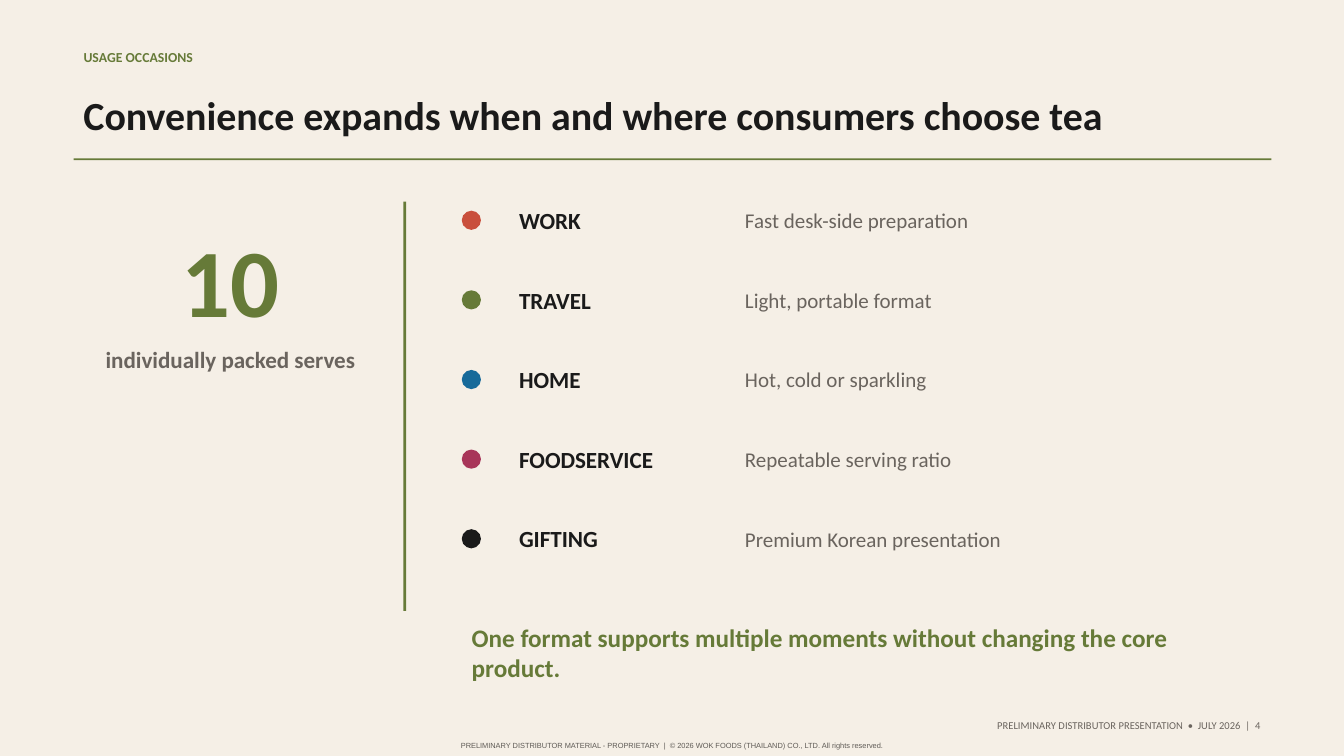
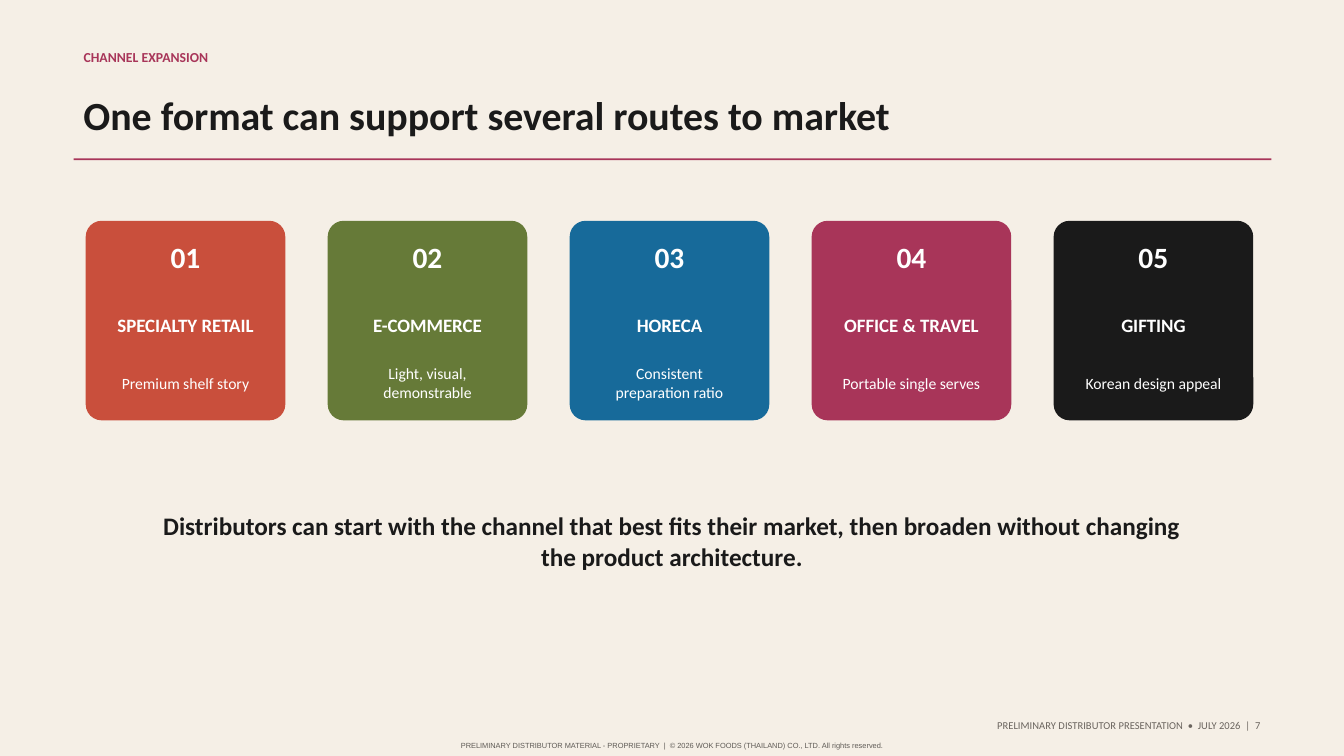
from dataclasses import dataclass

from pptx import Presentation
from pptx.dml.color import RGBColor
from pptx.enum.shapes import MSO_SHAPE
from pptx.enum.text import MSO_ANCHOR, PP_ALIGN
from pptx.util import Inches, Pt

RECT, ROUND, OVAL = MSO_SHAPE.RECTANGLE, MSO_SHAPE.ROUNDED_RECTANGLE, MSO_SHAPE.OVAL
LEFT, MID, RIGHT = PP_ALIGN.LEFT, PP_ALIGN.CENTER, PP_ALIGN.RIGHT
CENTER = MSO_ANCHOR.MIDDLE


def style(size, bold=False, name="Calibri"):
    return {"name": name, "size": Pt(size), "bold": bold}


@dataclass(frozen=True)
class Theme:
    paper: str = "F5EFE6"
    ink: str = "1A1A1A"
    gray: str = "6A645E"
    fine: str = "5F5B56"
    white: str = "FFFFFF"
    red: str = "C94F3C"
    green: str = "667A38"
    blue: str = "176A9A"
    plum: str = "A83559"

    @property
    def series(self):
        return self.red, self.green, self.blue, self.plum, self.ink


THEME = Theme()
TYPE = {
    "kicker": style(9.8, True),
    "title": style(28.5, True),
    "footer": style(7.5),
    "legal": style(5.3, name="Arial"),
    "figure": style(69, True),
    "label": style(16.5, True),
    "detail": style(15),
    "claim": style(18, True),
    "number": style(21, True),
    "channel": style(13.5, True),
    "note": style(11.2),
}
FOOTER = "PRELIMINARY DISTRIBUTOR PRESENTATION  •  JULY 2026  |  "
LEGAL = ("PRELIMINARY DISTRIBUTOR MATERIAL - PROPRIETARY  |  "
         "© 2026 WOK FOODS (THAILAND) CO., LTD. All rights reserved.")
USES = [
    ("WORK", "Fast desk-side preparation"),
    ("TRAVEL", "Light, portable format"),
    ("HOME", "Hot, cold or sparkling"),
    ("FOODSERVICE", "Repeatable serving ratio"),
    ("GIFTING", "Premium Korean presentation"),
]
ROUTES = [
    ("SPECIALTY RETAIL", "Premium shelf story"),
    ("E-COMMERCE", "Light, visual, demonstrable"),
    ("HORECA", "Consistent preparation ratio"),
    ("OFFICE & TRAVEL", "Portable single serves"),
    ("GIFTING", "Korean design appeal"),
]


def add_text(slide, box, text, kind, color, align=LEFT, inset=True):
    """Add one paragraph, vertically centred in box (inches)."""
    frame = slide.shapes.add_textbox(*map(Inches, box)).text_frame
    frame.word_wrap = True
    frame.vertical_anchor = CENTER
    if not inset:
        for side in ("left", "top", "right", "bottom"):
            setattr(frame, f"margin_{side}", 0)
    para = frame.paragraphs[0]
    para.alignment = align
    run = para.add_run()
    run.text = text
    for key, value in TYPE[kind].items():
        setattr(run.font, key, value)
    run.font.color.rgb = RGBColor.from_string(color)


def add_block(slide, kind, box, color):
    shape = slide.shapes.add_shape(kind, *map(Inches, box))
    shape.shadow.inherit = False
    shape.fill.solid()
    shape.fill.fore_color.rgb = RGBColor.from_string(color)
    shape.line.fill.background()
    return shape


def add_page(deck, kicker, title, number, accent):
    """Add a slide with the shared heading, rule and footers."""
    slide = deck.slides.add_slide(deck.slide_layouts[6])
    fill = slide.background.fill
    fill.solid()
    fill.fore_color.rgb = RGBColor.from_string(THEME.paper)
    add_text(slide, (0.73, 0.44, 4.58, 0.25), kicker, "kicker", accent)
    add_text(slide, (0.73, 0.79, 11.67, 0.69), title, "title", THEME.ink)
    add_block(slide, RECT, (0.73, 1.57, 11.88, 0.02), accent)
    add_text(slide, (8.02, 7.1, 4.58, 0.19), f"{FOOTER}{number}", "footer",
             THEME.gray, RIGHT)
    add_text(slide, (2.1, 7.34, 9.13, 0.11), LEGAL, "legal", THEME.fine, MID, False)
    return slide


def add_use(slide, top, color, label, detail):
    add_block(slide, OVAL, (4.58, top + 0.07, 0.19, 0.19), color)
    add_text(slide, (5.05, top, 2.19, 0.33), label, "label", THEME.ink)
    add_text(slide, (7.29, top, 4.79, 0.33), detail, "detail", THEME.gray)


def add_card(slide, left, color, number, channel, note):
    side = 1.98
    card = add_block(slide, ROUND, (left, 2.19, side, side), color)
    card.adjustments[0] = 0.08
    rows = [
        (number, "number", 2.34, 1.56, 0.42),
        (channel, "channel", 2.97, 1.65, 0.5),
        (note, "note", 3.59, 1.6, 0.42),
    ]
    for text, kind, top, width, height in rows:
        box = (left + (side - width) / 2, top, width, height)
        add_text(slide, box, text, kind, THEME.white, MID)


def add_uses(deck):
    slide = add_page(deck, "USAGE OCCASIONS",
                     "Convenience expands when and where consumers choose tea",
                     4, THEME.green)
    add_text(slide, (0.88, 2.14, 2.81, 1.25), "10", "figure", THEME.green, MID)
    add_text(slide, (0.88, 3.33, 2.81, 0.47), "individually packed serves",
             "label", THEME.gray, MID)
    add_block(slide, RECT, (4, 2, 0.03, 4.06), THEME.green)
    for i, (color, use) in enumerate(zip(THEME.series, USES)):
        add_use(slide, 2.02 + 0.79 * i, color, *use)
    add_text(slide, (4.58, 6.27, 7.5, 0.4),
             "One format supports multiple moments without changing the core product.",
             "claim", THEME.green)


def add_routes(deck):
    slide = add_page(deck, "CHANNEL EXPANSION",
                     "One format can support several routes to market",
                     7, THEME.plum)
    for i, (color, route) in enumerate(zip(THEME.series, ROUTES)):
        add_card(slide, 0.85 + 2.4 * i, color, f"{i + 1:02}", *route)
    add_text(slide, (1.51, 4.94, 10.31, 0.85),
             "Distributors can start with the channel that best fits their market, "
             "then broaden without changing the product architecture.",
             "claim", THEME.ink, MID)


def main():
    deck = Presentation()
    deck.slide_width, deck.slide_height = Inches(13.33), Inches(7.5)
    add_uses(deck)
    add_routes(deck)
    deck.save("out.pptx")


if __name__ == "__main__":
    main()
